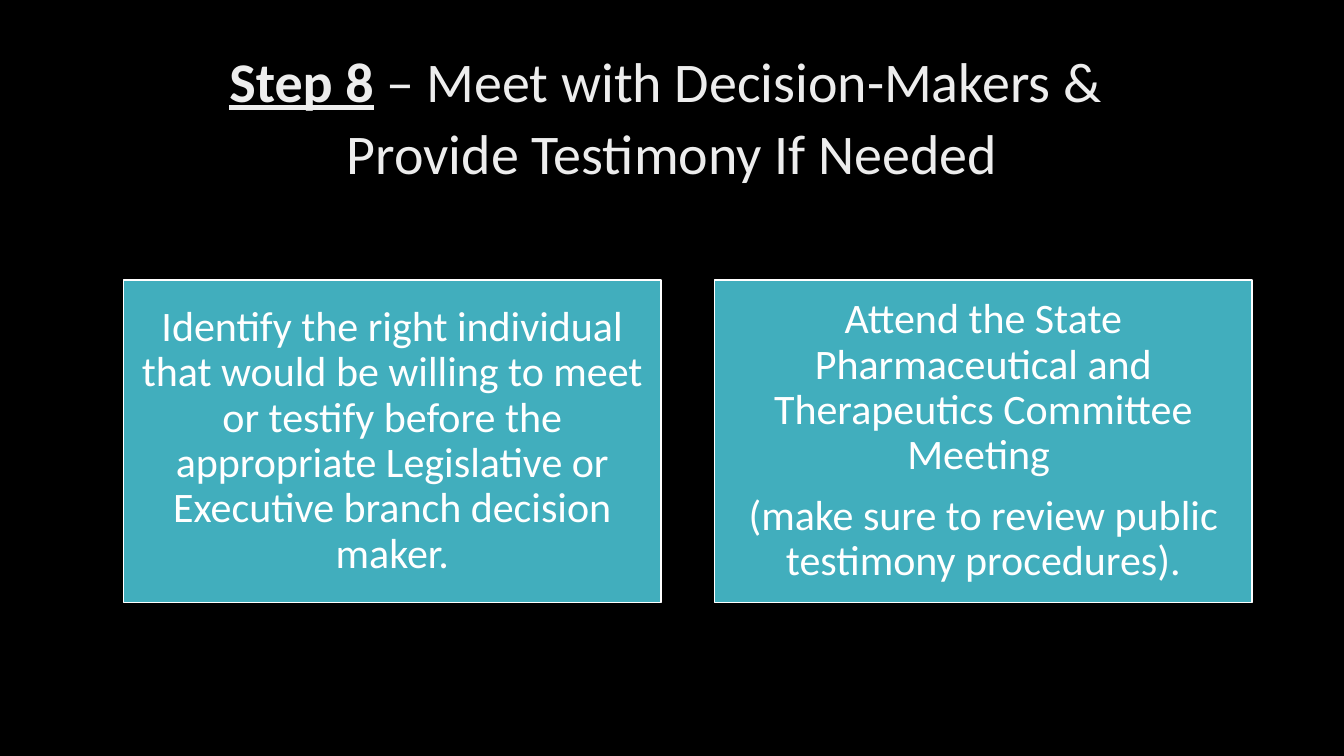
"""Build the Step 8 slide: a title above two text cards."""
from pptx import Presentation
from pptx.dml.color import RGBColor
from pptx.enum.shapes import MSO_SHAPE as Shape
from pptx.enum.text import MSO_ANCHOR as Anchor, MSO_AUTO_SIZE as Fit, PP_ALIGN as Align
from pptx.util import Pt


def paint(fill, color):
    fill.solid()
    fill.fore_color.rgb = RGBColor.from_string(color)


def style(item, form):
    for key, value in form.items():
        setattr(item, key, value)


deck = Presentation()
style(deck, dict(slide_width=Pt(960), slide_height=Pt(540)))
slide = deck.slides.add_slide(deck.slide_layouts[5])
paint(slide.background.fill, "000000")

title = slide.shapes.title
style(title, dict(left=Pt(66), top=Pt(28.8), width=Pt(828), height=Pt(104.4)))
style(title.text_frame, dict(vertical_anchor=Anchor.MIDDLE, word_wrap=True,
                             auto_size=Fit.NONE))
head = title.text_frame.paragraphs[0]
style(head, dict(alignment=Align.CENTER, line_spacing=1.07, space_after=Pt(8)))
step = head.add_run()
step.text = "Step 8"
lead = head.add_run()
lead.text = " – Meet with Decision-Makers & "
head.add_line_break()
rest = head.add_run()
rest.text = "Provide Testimony If Needed"
for run in (step, lead, rest):
    style(run.font, dict(name="Calibri", size=Pt(40), bold=run is step,
                         underline=run is step))
    paint(run.font.fill, "EDEDED")

cards = [
    ["Identify the right individual that would be willing to meet or testify "
     "before the appropriate Legislative or Executive branch decision maker."],
    ["Attend the State Pharmaceutical and Therapeutics Committee Meeting ",
     "(make sure to review public testimony procedures)."],
]
pad = Pt(8.64)
for col, lines in enumerate(cards):
    card = slide.shapes.add_shape(Shape.RECTANGLE, Pt(88.4 + 422.2 * col),
                                  Pt(200), Pt(383.8), Pt(230.3))
    card.shadow.inherit = False
    paint(card.fill, "41AEBD")
    paint(card.line.fill, "FFFFFF")
    card.line.width = Pt(1)
    frame = card.text_frame
    style(frame, dict(word_wrap=True, vertical_anchor=Anchor.MIDDLE,
                      margin_left=pad, margin_right=pad,
                      margin_top=pad, margin_bottom=pad))
    for row, text in enumerate(lines):
        para = frame.add_paragraph() if row else frame.paragraphs[0]
        style(para, dict(alignment=Align.CENTER, line_spacing=0.9,
                         space_after=Pt(11)))
        run = para.add_run()
        run.text = text
        style(run.font, dict(name="Calibri", size=Pt(30)))
        paint(run.font.fill, "FFFFFF")

deck.save("out.pptx")
